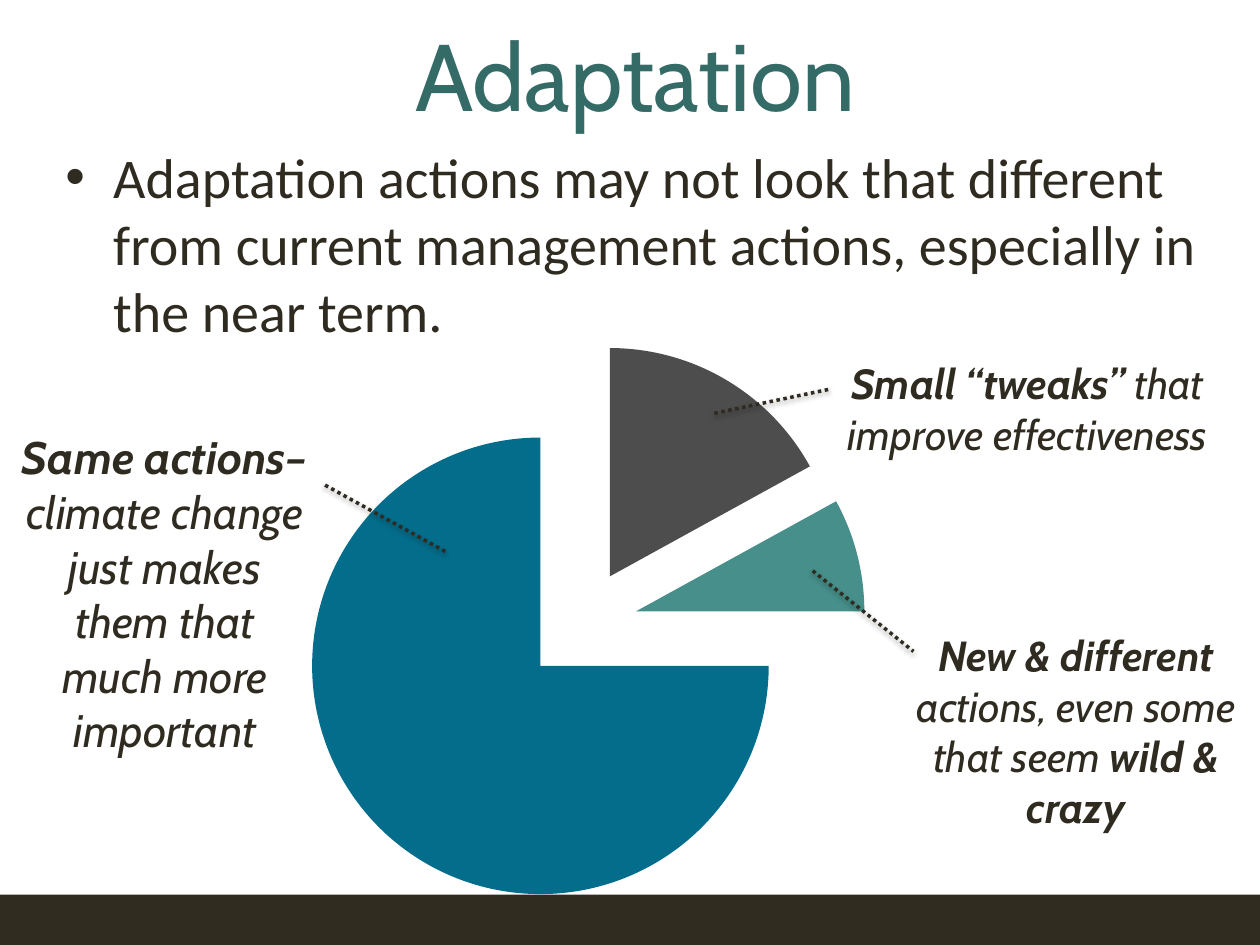
import pptx
import pptx.chart.data
import pptx.dml.color
import pptx.enum.chart
import pptx.enum.dml
import pptx.enum.shapes
import pptx.enum.text
import pptx.oxml
import pptx.oxml.ns
import pptx.util

COLORS = {
    "ink": "2F2B20",
    "band": "302C20",
    "title": "356B67",
    "tweaks": "4D4D4D",
    "new": "468F8A",
    "same": "046D8B",
}
SLIDE_WIDTH = pptx.util.Inches(10)
SLIDE_HEIGHT = pptx.util.Inches(7.5)
COLUMNS, ROWS = 100, 75
CENTER = pptx.enum.text.PP_ALIGN.CENTER


def grid(*lengths):
    units = (SLIDE_WIDTH / COLUMNS, SLIDE_HEIGHT / ROWS)
    return [round(length * units[index % 2]) for index, length in enumerate(lengths)]


def rgb(name):
    return pptx.dml.color.RGBColor.from_string(COLORS[name])


def xml(markup, prefix):
    head, tail = markup.split(">", 1) if not markup.endswith("/>") else (markup[:-2], None)
    namespaces = pptx.oxml.ns.nsdecls(prefix)
    ending = "/>" if tail is None else ">" + tail
    return pptx.oxml.parse_xml(f"{head} {namespaces}{ending}")


def add_text(paragraph, text, font="Cabin", size=24, color="ink", bold=False, italic=False):
    run = paragraph.add_run()
    run.text = text
    run.font.name = font
    run.font.size = pptx.util.Pt(size)
    run.font.color.rgb = rgb(color)
    run.font.bold = bold
    run.font.italic = italic


def add_band(slide, box):
    band = slide.shapes.add_shape(pptx.enum.shapes.MSO_SHAPE.RECTANGLE, *grid(*box))
    band.shadow.inherit = False
    band.fill.solid()
    band.fill.fore_color.rgb = rgb("band")
    band.line.fill.background()


def add_title(slide, box, text):
    title = slide.shapes.title
    title.left, title.top, title.width, title.height = grid(*box)
    title.text_frame.vertical_anchor = pptx.enum.text.MSO_ANCHOR.MIDDLE
    paragraph = title.text_frame.paragraphs[0]
    paragraph.alignment = CENTER
    add_text(paragraph, text, size=54, color="title")


def add_statement(slide, box, text):
    frame = slide.shapes.add_textbox(*grid(*box)).text_frame
    frame.word_wrap = True
    paragraph = frame.paragraphs[0]
    properties = paragraph._p.get_or_add_pPr()
    indent = pptx.util.Inches(0.38)
    properties.set("marL", str(indent))
    properties.set("indent", str(-indent))
    properties.append(xml('<a:buFont typeface="Arial"/>', "a"))
    properties.append(xml('<a:buChar char="•"/>', "a"))
    add_text(paragraph, text, font="Calibri", size=32)


def add_pie(slide, box, slices, plot, explosion):
    data = pptx.chart.data.CategoryChartData()
    data.categories = [str(number) for number in range(1, len(slices) + 1)]
    data.add_series("Series 1", [value for value, color in slices])
    kind = pptx.enum.chart.XL_CHART_TYPE.PIE
    chart = slide.shapes.add_chart(kind, *grid(*box), data).chart
    chart.has_title = False
    chart.has_legend = False
    chart.font.name = "Calibri"
    chart.font.size = pptx.util.Pt(18)
    chart.font.color.rgb = rgb("ink")
    pie = chart.plots[0]
    pie.vary_by_categories = True

    series = pie.series[0]
    series._element.find(pptx.oxml.ns.qn("c:tx")).addnext(
        xml(f'<c:explosion val="{explosion}"/>', "c"))
    for index, (value, color) in enumerate(slices):
        point = series.points[index].format
        point.fill.solid()
        point.fill.fore_color.rgb = rgb(color)
        point.line.fill.background()

    area = chart._chartSpace.chart.plotArea
    for layout in area.findall(pptx.oxml.ns.qn("c:layout")):
        area.remove(layout)
    modes = '<c:layoutTarget val="inner"/><c:xMode val="edge"/><c:yMode val="edge"/>'
    sizes = "".join(f'<c:{side} val="{share}"/>' for side, share in zip("xywh", plot))
    area.insert(0, xml(
        f"<c:layout><c:manualLayout>{modes}{sizes}</c:manualLayout></c:layout>", "c"))


def add_label(slide, box, pieces, size):
    frame = slide.shapes.add_textbox(*grid(*box)).text_frame
    frame.word_wrap = True
    frame.auto_size = pptx.enum.text.MSO_AUTO_SIZE.SHAPE_TO_FIT_TEXT
    paragraph = frame.paragraphs[0]
    paragraph.alignment = CENTER
    for index, text in enumerate(pieces):
        add_text(paragraph, text, size=size, bold=index % 2 == 0, italic=True)


def add_leader(slide, ends):
    straight = pptx.enum.shapes.MSO_CONNECTOR.STRAIGHT
    leader = slide.shapes.add_connector(straight, *grid(*ends))
    leader.line.color.rgb = rgb("ink")
    leader.line.width = pptx.util.Pt(2)
    leader.line.dash_style = pptx.enum.dml.MSO_LINE.ROUND_DOT
    blur, distance = pptx.util.Pt(3.1), pptx.util.Pt(1.6)
    leader._element.spPr.append(xml(
        f'<a:effectLst><a:outerShdw blurRad="{blur}" dist="{distance}" dir="5400000">'
        '<a:srgbClr val="000000"><a:alpha val="38000"/></a:srgbClr>'
        "</a:outerShdw></a:effectLst>", "a"))


def build_slide(presentation):
    slide = presentation.slides.add_slide(presentation.slide_layouts[5])
    add_band(slide, (0, 71, 100, 4))
    add_title(slide, (0.8, 0, 99.2, 11.7), "Adaptation")
    add_statement(
        slide, (4.2, 10.8, 94.2, 10.5),
        "Adaptation actions may not look that different from current "
        "management actions, especially in the near term.")
    add_pie(
        slide, (7.6, 25.4, 75.2, 46.9),
        [(17, "tweaks"), (8, "new"), (75, "same")],
        plot=(0.19, 0.034, 0.644, 0.966), explosion=25)

    labels = [
        ((0.6, 33.6, 25, 27.3), 26,
         ["Same actions– ", "climate change just makes them that much more important"]),
        ((64.5, 27.9, 34.1, 9.1), 24,
         ["Small “tweaks” ", "that improve effectiveness"]),
        ((69.2, 49.5, 32.4, 17.2), 24,
         ["New & different ", "actions, even some that seem ", "wild & crazy"]),
    ]
    for box, size, pieces in labels:
        add_label(slide, box, pieces, size)

    leaders = [
        (25.8, 38.5, 35.4, 43.8),
        (56.7, 32.8, 65.8, 30.9),
        (64.5, 45.3, 72.5, 51.7),
    ]
    for ends in leaders:
        add_leader(slide, ends)


def main():
    presentation = pptx.Presentation()
    presentation.slide_width = SLIDE_WIDTH
    presentation.slide_height = SLIDE_HEIGHT
    build_slide(presentation)
    presentation.save("out.pptx")


if __name__ == "__main__":
    main()
